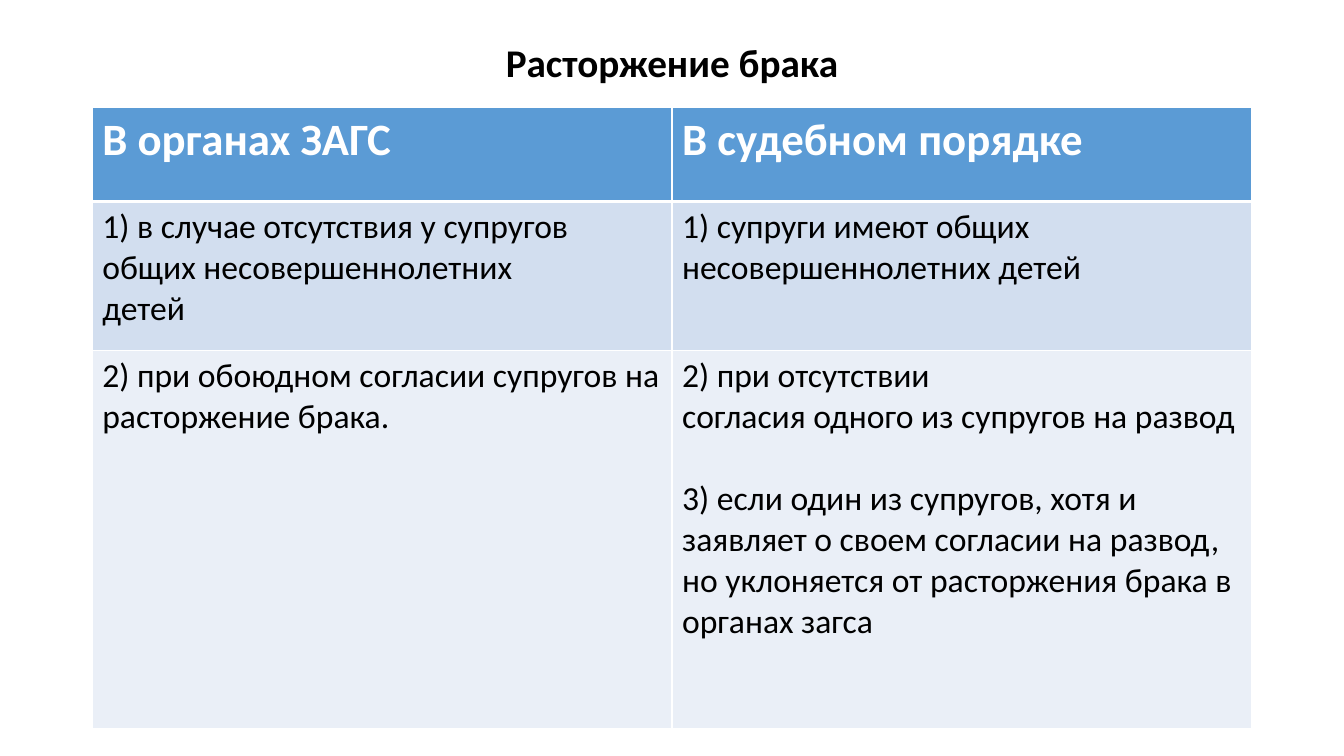
import lxml.etree
import pptx
import pptx.dml.color
import pptx.enum.text
import pptx.oxml.ns
import pptx.util

SLIDE_WIDTH, SLIDE_HEIGHT = 13.33, 7.5
FONT = "Calibri"
COLORS = {
    "text": "000000",
    "header_text": "FFFFFF",
    "border": "FFFFFF",
    "header": "5B9BD5",
    "band_dark": "D2DEEF",
    "band_light": "EAEFF7",
}
ROW_HEIGHTS = [0.93, 1.48, 3.75]
ROW_FILLS = ["header", "band_dark", "band_light"]
# Each cell is a list of groups; each group is a list of paragraphs.
DIVORCE_ROWS = [
    [[["В органах ЗАГС"]], [["В судебном порядке"]]],
    [
        [["1) в случае отсутствия у супругов общих несовершеннолетних", "детей"]],
        [["1) супруги имеют общих несовершеннолетних детей"]],
    ],
    [
        [["2) при обоюдном согласии супругов на расторжение брака."]],
        [
            ["2) при отсутствии", "согласия одного из супругов на развод"],
            [
                "3) если один из супругов, хотя и заявляет о своем согласии на развод,",
                "но уклоняется от расторжения брака в органах загса",
            ],
        ],
    ],
]


def rgb(name):
    return pptx.dml.color.RGBColor.from_string(COLORS[name])


def write_text(frame, groups, size=24, color="text", bold=False,
               align=None, line_spacing=None):
    """Write groups of paragraphs, with one line of space between groups."""
    paragraph = None
    for group_index, group in enumerate(groups):
        for line_index, text in enumerate(group):
            paragraph = frame.add_paragraph() if paragraph else frame.paragraphs[0]
            paragraph.alignment = align
            paragraph.line_spacing = line_spacing
            if group_index and not line_index:
                paragraph.space_before = pptx.util.Pt(size * 1.22)
            run = paragraph.add_run()
            run.text = text
            run.font.name = FONT
            run.font.size = pptx.util.Pt(size)
            run.font.bold = bold
            run.font.color.rgb = rgb(color)


def set_borders(cell, **widths):
    """Draw solid borders; lines come before the fill in the cell properties."""
    properties = cell._tc.get_or_add_tcPr()
    qn = pptx.oxml.ns.qn
    for index, side in enumerate("LRTB"):
        width = pptx.util.Pt(widths.get(side, 1))
        line = lxml.etree.Element(qn(f"a:ln{side}"), w=str(int(width)))
        fill = lxml.etree.SubElement(line, qn("a:solidFill"))
        lxml.etree.SubElement(fill, qn("a:srgbClr"), val=COLORS["border"])
        properties.insert(index, line)


def add_title(slide, text, left, top, width, height):
    title = slide.shapes.title
    title.left, title.top, title.width, title.height = map(
        pptx.util.Inches, (left, top, width, height))
    frame = title.text_frame
    frame.word_wrap = True
    frame.auto_size = pptx.enum.text.MSO_AUTO_SIZE.NONE
    frame.vertical_anchor = pptx.enum.text.MSO_ANCHOR.MIDDLE
    write_text(frame, [[text]], size=28, bold=True, line_spacing=0.9,
               align=pptx.enum.text.PP_ALIGN.CENTER)


def add_comparison_table(slide, rows, left, top, width):
    column_count = len(rows[0])
    table = slide.shapes.add_table(
        len(rows), column_count,
        *map(pptx.util.Inches, (left, top, width, sum(ROW_HEIGHTS)))).table
    for column in table.columns:
        column.width = pptx.util.Inches(width / column_count)
    for row_index, row in enumerate(rows):
        table.rows[row_index].height = pptx.util.Inches(ROW_HEIGHTS[row_index])
        is_header = row_index == 0
        for column_index, groups in enumerate(row):
            cell = table.cell(row_index, column_index)
            cell.fill.solid()
            cell.fill.fore_color.rgb = rgb(ROW_FILLS[row_index])
            set_borders(cell, B=3 if is_header else 1, T=3 if row_index == 1 else 1)
            if is_header:
                write_text(cell.text_frame, groups, size=32,
                           color="header_text", bold=True)
            else:
                write_text(cell.text_frame, groups)


def main():
    presentation = pptx.Presentation()
    presentation.slide_width = pptx.util.Inches(SLIDE_WIDTH)
    presentation.slide_height = pptx.util.Inches(SLIDE_HEIGHT)
    slide = presentation.slides.add_slide(
        presentation.slide_layouts.get_by_name("Title Only"))
    content_width = 11.5
    margin = (SLIDE_WIDTH - content_width) / 2
    add_title(slide, "Расторжение брака", margin, 0.4, content_width, 0.49)
    add_comparison_table(slide, DIVORCE_ROWS, margin, 1.07, content_width)
    presentation.save("out.pptx")


if __name__ == "__main__":
    main()
